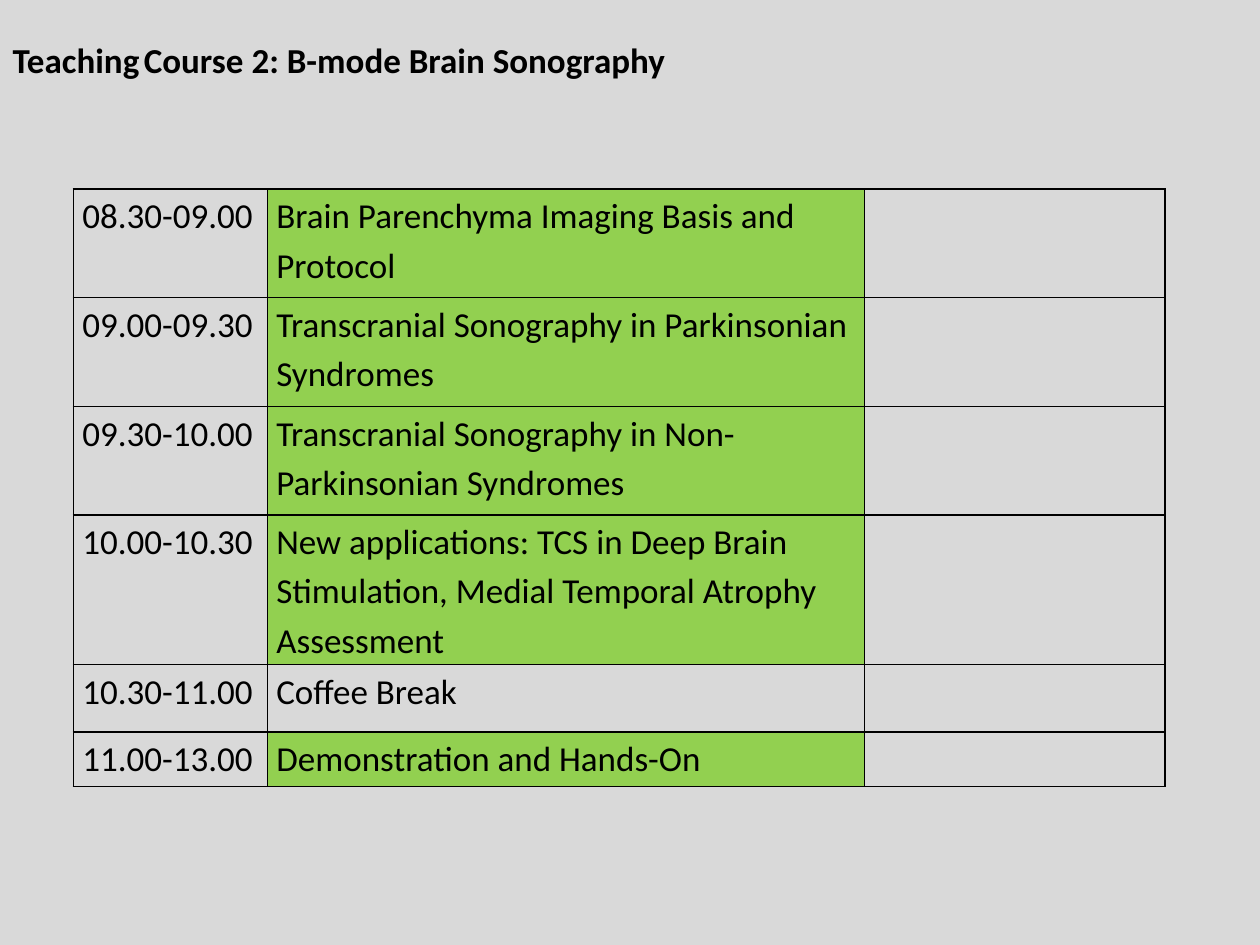
from lxml import etree
from pptx import Presentation
from pptx import util as u
from pptx.dml.color import RGBColor
from pptx.enum import text
from pptx.oxml.ns import qn

BLACK, GREEN, GREY = "000000", "92D050", "D9D9D9"
COLUMN_WIDTHS = (3.91, 12.04, 6.05)
SCHEDULE = (
    ("08.30-09.00", "Brain Parenchyma Imaging Basis and Protocol", 2.19, GREEN),
    ("09.00-09.30", "Transcranial Sonography in Parkinsonian Syndromes", 2.19, GREEN),
    ("09.30-10.00", "Transcranial Sonography in Non-Parkinsonian Syndromes", 2.19, GREEN),
    ("10.00-10.30", "New applications: TCS in Deep Brain Stimulation, "
     "Medial Temporal Atrophy Assessment", 3.02, GREEN),
    ("10.30-11.00", "Coffee Break", 1.36, None),
    ("11.00-13.00", "Demonstration and Hands-On", 1.09, GREEN),
)


def color(value):
    return RGBColor.from_string(value)


def style_font(font, size, bold=False):
    font.name = "Calibri"
    font.size = u.Pt(size)
    font.bold = bold
    font.color.rgb = color(BLACK)


def set_background(slide):
    fill = slide.background.fill
    fill.solid()
    fill.fore_color.rgb = color(GREY)


def add_title(slide):
    title = slide.shapes.title
    title.left, title.top = u.Cm(0), u.Cm(0.64)
    title.width, title.height = u.Cm(13.79), u.Cm(1.88)
    frame = title.text_frame
    frame.auto_size = text.MSO_AUTO_SIZE.NONE
    frame.vertical_anchor = text.MSO_ANCHOR.TOP
    paragraph = frame.paragraphs[0]
    paragraph.alignment = text.PP_ALIGN.LEFT
    for words, size, bold in (
        ("Teaching", 20, True),
        (" ", 11, False),
        ("Course 2: B-mode Brain Sonography", 20, True),
    ):
        run = paragraph.add_run()
        run.text = words
        style_font(run.font, size, bold)


def add_borders(cell):
    properties = cell._tc.get_or_add_tcPr()
    for position, side in enumerate(("a:lnL", "a:lnR", "a:lnT", "a:lnB")):
        line = etree.Element(qn(side), w=str(u.Pt(1)))
        fill = etree.SubElement(line, qn("a:solidFill"))
        etree.SubElement(fill, qn("a:srgbClr"), val=BLACK)
        properties.insert(position, line)


def fill_cell(cell, words, fill_color):
    cell.margin_left = cell.margin_right = u.Cm(0.18)
    cell.margin_top = cell.margin_bottom = 0
    cell.text = words
    paragraph = cell.text_frame.paragraphs[0]
    paragraph.line_spacing = 1.15
    style_font(paragraph.font, 20)
    if fill_color:
        cell.fill.solid()
        cell.fill.fore_color.rgb = color(fill_color)
    else:
        cell.fill.background()
    add_borders(cell)


def add_schedule(slide):
    height = sum(row[2] for row in SCHEDULE)
    table = slide.shapes.add_table(
        len(SCHEDULE), len(COLUMN_WIDTHS), u.Cm(1.48), u.Cm(3.81),
        u.Cm(sum(COLUMN_WIDTHS)), u.Cm(height)).table
    table.first_row = table.horz_banding = False
    for column, width in zip(table.columns, COLUMN_WIDTHS):
        column.width = u.Cm(width)
    for row, (time, topic, row_height, topic_fill) in zip(table.rows, SCHEDULE):
        row.height = u.Cm(row_height)
        contents = ((time, None), (topic, topic_fill), ("", None))
        for cell, (words, fill_color) in zip(row.cells, contents):
            fill_cell(cell, words, fill_color)


def main():
    presentation = Presentation()
    presentation.slide_width, presentation.slide_height = u.Cm(25.4), u.Cm(19.05)
    slide = presentation.slides.add_slide(presentation.slide_layouts[5])
    set_background(slide)
    add_title(slide)
    add_schedule(slide)
    presentation.save("out.pptx")


if __name__ == "__main__":
    main()
